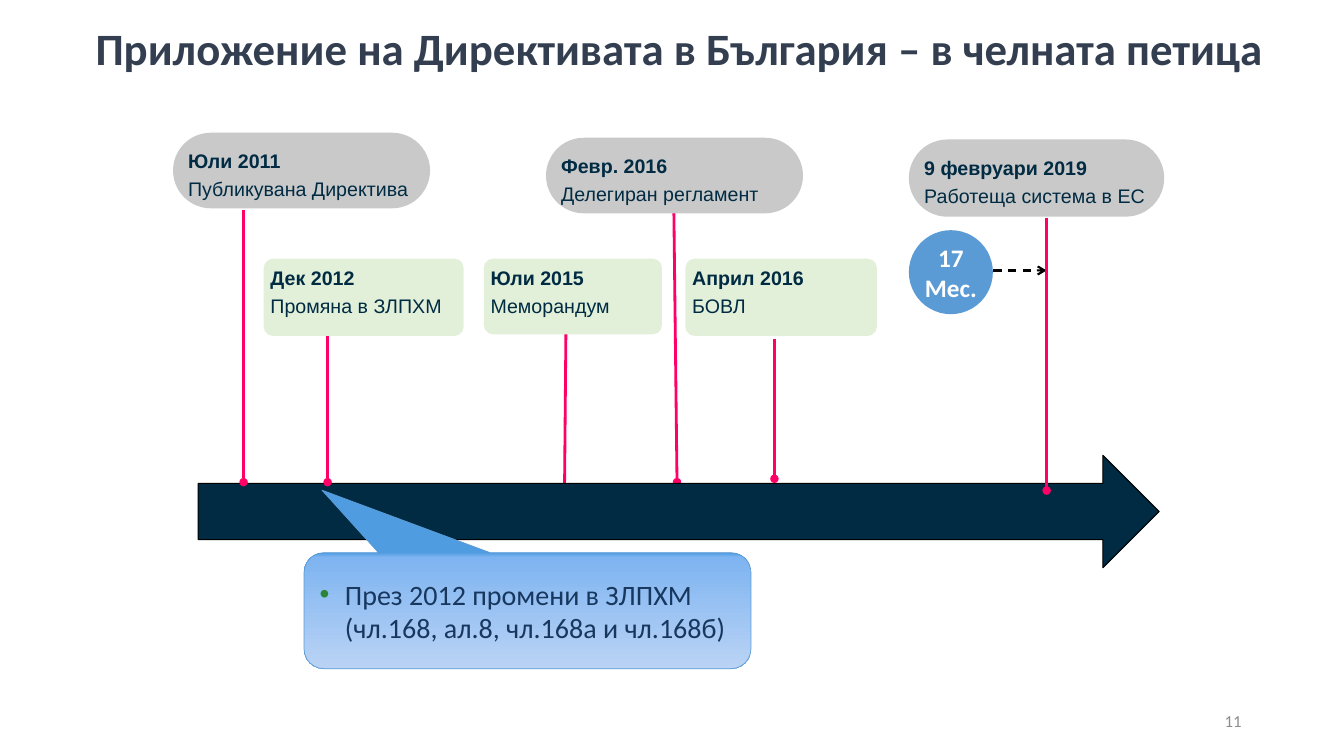
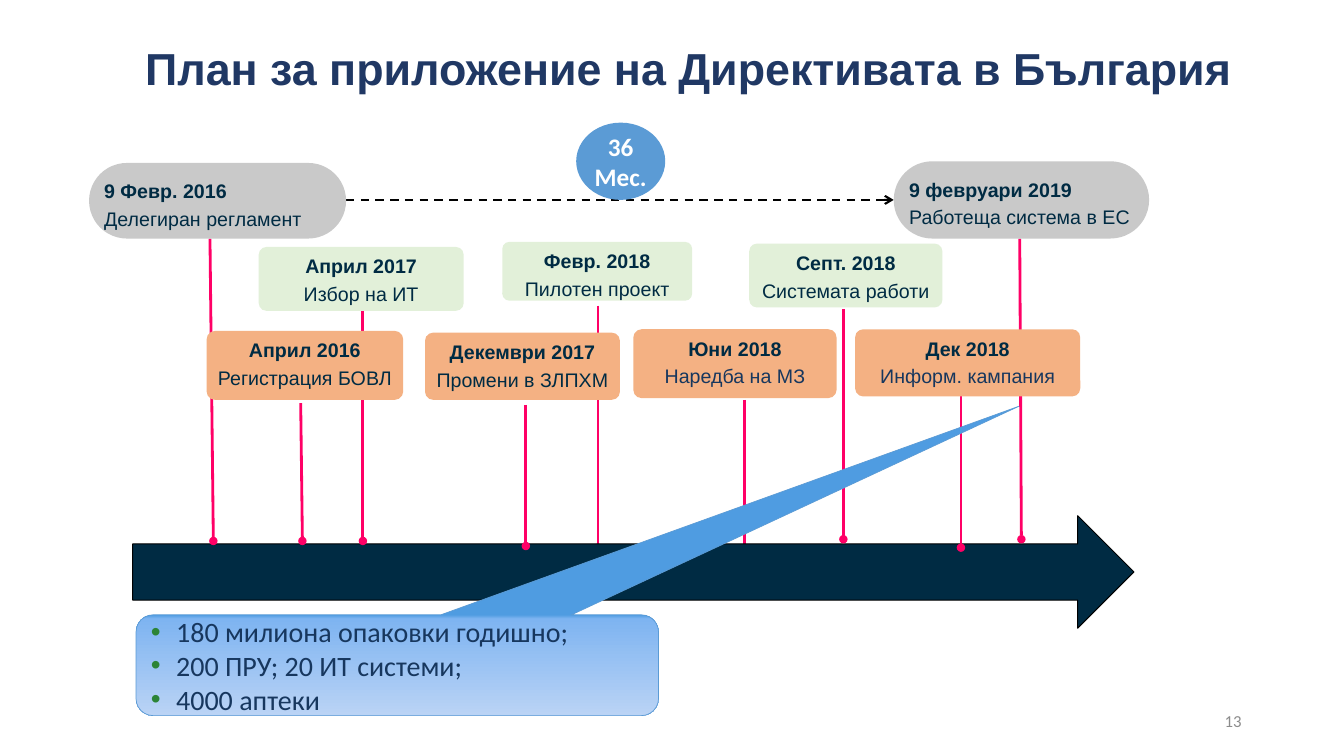
from lxml import etree
from pptx import Presentation
from pptx import util as u
from pptx.dml.color import RGBColor
from pptx.enum import dml, shapes, text
from pptx.oxml import ns

# Slide grid: 80 columns by 45 rows of square cells
COLS, ROWS = 80, 45
CELL = u.Inches(7.5) / ROWS

NAVY, INK, PINK, BLACK, WHITE = "002B43", "17375E", "FF0066", "000000", "FFFFFF"
GREY, GREEN, ORANGE, BLUE = "C9C9C9", "E2F0D9", "F4B183", "5B9BD5"
NUMBER_GREY, BULLET_GREEN = "8C8C8C", "2C8436"
CALLOUT_STOPS = [(0, "4F9CE1"), (4, "7EB4F1"), (100, "BAD3F5")]
LEFT, CENTER, RIGHT = text.PP_ALIGN.LEFT, text.PP_ALIGN.CENTER, text.PP_ALIGN.RIGHT
TOP, MIDDLE = text.MSO_ANCHOR.TOP, text.MSO_ANCHOR.MIDDLE
SHAPE = shapes.MSO_SHAPE


def cells(*values):
    return [u.Emu(round(v * CELL)) for v in values]


def rgb(color):
    return RGBColor.from_string(color)


def add_xml(parent, tag, **attrs):
    return etree.SubElement(parent, ns.qn(tag), **attrs)


def write(tf, lines, size, color, font="Calibri", bold=False, align=LEFT, anchor=MIDDLE):
    """Fill a text frame with one paragraph per line, all in one style."""
    tf.word_wrap = True
    tf.vertical_anchor = anchor
    tf.text = "\n".join(lines)
    for p in tf.paragraphs:
        p.alignment = align
        for r in p.runs:
            r.font.size, r.font.name, r.font.bold = u.Pt(size), font, bold
            r.font.color.rgb = rgb(color)


def set_insets(tf, x, y):
    tf.margin_left = tf.margin_right = u.Inches(x)
    tf.margin_top = tf.margin_bottom = u.Inches(y)


def add_shape(slide, kind, rect, fill=None, line=None, width=0.75, adj=()):
    sp = slide.shapes.add_shape(kind, *cells(*rect))
    sp.shadow.inherit = False
    if fill:
        sp.fill.solid()
        sp.fill.fore_color.rgb = rgb(fill)
    if line:
        sp.line.color.rgb = rgb(line)
        sp.line.width = u.Pt(width)
    else:
        sp.line.fill.background()
    for i, value in enumerate(adj):
        sp.adjustments[i] = value
    return sp


def add_line(slide, ends, color, width, tip, dashed=False):
    line = slide.shapes.add_connector(shapes.MSO_CONNECTOR.STRAIGHT, *cells(*ends))
    line.line.color.rgb = rgb(color)
    line.line.width = u.Pt(width)
    if dashed:
        line.line.dash_style = dml.MSO_LINE.DASH
    add_xml(line.line._get_or_add_ln(), "a:tailEnd", type=tip)
    add_xml(line._element.spPr, "a:effectLst")


def add_pins(slide, pins):
    for ends in pins:
        add_line(slide, ends, PINK, 2, "oval")


def add_textbox(slide, rect, line, size, color, **style):
    tf = slide.shapes.add_textbox(*cells(*rect)).text_frame
    write(tf, [line], size, color, **style)
    return tf


def add_title(slide, rect, title, color, font, align):
    tf = add_textbox(slide, rect, title, 32, color, font=font, bold=True,
                     align=align, anchor=TOP)
    tf.paragraphs[0].line_spacing = 0.9


def add_event(slide, rect, date, event, fill, align=LEFT, event_color=NAVY):
    """Rounded box with a bold date over an event; grey ones are pills."""
    sp = add_shape(slide, SHAPE.ROUNDED_RECTANGLE, rect, fill,
                   adj=[0.5 if fill == GREY else 0.12])
    tf = sp.text_frame
    write(tf, [date, event], 14, NAVY, font="Arial", align=align, anchor=TOP)
    set_insets(tf, 0.04, 0.05)
    for p in tf.paragraphs:
        p.space_after = u.Pt(3)
    tf.paragraphs[0].runs[0].font.bold = True
    tf.paragraphs[1].runs[0].font.color.rgb = rgb(event_color)


def add_duration(slide, rect, label):
    tf = add_shape(slide, SHAPE.OVAL, rect, BLUE).text_frame
    write(tf, [label], 18, WHITE, bold=True, align=CENTER)
    set_insets(tf, 0, 0)


def fill_gradient(sp, stops):
    """Top-to-bottom gradient through (percent, colour) stops."""
    sp.fill.gradient()
    grad = sp._element.spPr.find(ns.qn("a:gradFill"))
    for child in list(grad):
        grad.remove(child)
    gs_list = add_xml(grad, "a:gsLst")
    for percent, color in stops:
        gs = add_xml(gs_list, "a:gs", pos=str(percent * 1000))
        add_xml(gs, "a:srgbClr", val=color)
    add_xml(grad, "a:lin", ang="5400000", scaled="0")


def add_callout(slide, rect, pointer, lines):
    sp = add_shape(slide, SHAPE.ROUNDED_RECTANGULAR_CALLOUT, rect, line=BLUE,
                   width=0.5, adj=[*pointer, 0.17])
    fill_gradient(sp, CALLOUT_STOPS)
    write(sp.text_frame, lines, 20, INK)
    indent = u.Inches(0.25)
    for p in sp.text_frame.paragraphs:
        pPr = p._p.get_or_add_pPr()
        pPr.set("marL", str(indent))
        pPr.set("indent", str(-indent))
        add_xml(add_xml(pPr, "a:buClr"), "a:srgbClr", val=BULLET_GREEN)
        add_xml(pPr, "a:buFont", typeface="Arial")
        add_xml(pPr, "a:buChar", char="•")


def add_timeline(prs, title, number, axis, pins_behind, pins, span, duration,
                 events, callout):
    slide = prs.slides.add_slide(prs.slide_layouts[6])
    add_title(slide, *title)
    add_line(slide, span, BLACK, 1.5, "arrow", dashed=True)
    add_pins(slide, pins_behind)
    add_shape(slide, SHAPE.RIGHT_ARROW, axis, NAVY, BLACK, adj=[0.5, 0.5])
    add_pins(slide, pins)
    for event in events:
        add_event(slide, *event)
    add_duration(slide, *duration)
    add_callout(slide, *callout)
    add_textbox(slide, (56.5, 41.7, 18, 2.4), number, 12, NUMBER_GREY, align=RIGHT)


def main():
    prs = Presentation()
    prs.slide_width, prs.slide_height = cells(COLS, ROWS)
    add_timeline(
        prs,
        title=((5.1, 1.3, 71.3, 3.8),
               "Приложение на Директивата в България – в челната петица",
               "333F50", "Calibri", LEFT),
        number="11",
        axis=(11.8, 27.1, 57.2, 6.7),
        pins_behind=[(33.7, 18.2, 33.6, 29.4), (40.1, 11.5, 40.3, 28.7)],
        pins=[(14.5, 12.5, 14.5, 28.7), (19.5, 18.3, 19.5, 28.7),
              (46.1, 20.2, 46.1, 28.5), (62.3, 13, 62.3, 29.2)],
        span=(56.5, 16.1, 62.3, 16.1),
        duration=((54.1, 13.7, 5, 5), "17 Mес."),
        events=[
            ((10.3, 7.9, 15.3, 4.5), "Юли 2011", "Публикувана Директива", GREY),
            ((32.5, 8.2, 15.3, 4.5), "Февр. 2016", "Делегиран регламент", GREY),
            ((54.1, 8.3, 15.2, 4.6), "9 февруари 2019", "Работеща система в ЕС", GREY),
            ((15.7, 15.4, 11.9, 4.6), "Дек 2012", "Промяна в ЗЛПХМ", GREEN),
            ((28.8, 15.4, 10.6, 4.5), "Юли 2015", "Меморандум", GREEN),
            ((40.8, 15.4, 11.4, 4.6), "Април 2016", "БОВЛ", GREEN),
        ],
        callout=((18.1, 32.9, 26.6, 6.9), (-0.46, -1.04),
                 ["През 2012 промени в ЗЛПХМ (чл.168, ал.8, чл.168а и чл.168б)"]),
    )
    add_timeline(
        prs,
        title=((7.5, 2.5, 67, 4.9), "План за приложение на Директивата в България",
               "203864", "Arial", CENTER),
        number="13",
        axis=(7.9, 30.7, 59.6, 6.7),
        pins_behind=[(35.6, 18.2, 35.6, 32.6), (44.3, 23.8, 44.3, 33.1)],
        pins=[(12.5, 14.2, 12.7, 32.2), (17.9, 24, 18, 32.2),
              (21.6, 17.5, 21.6, 32.2), (31.3, 24.1, 31.3, 32.5),
              (50.2, 18.4, 50.2, 32.1), (57.2, 23.5, 57.2, 32.6),
              (60.7, 14.2, 60.8, 32.1)],
        span=(20.6, 11.9, 53.2, 11.9),
        duration=((34.3, 7.3, 5.3, 4.6), "36 Mес."),
        events=[
            ((5.3, 9.7, 15.3, 4.5), "9 Февр. 2016", "Делегиран регламент", GREY),
            ((53.2, 9.6, 15.2, 4.6), "9 февруари 2019", "Работеща система в ЕС", GREY),
            ((15.4, 14.7, 12.2, 3.8), "Април 2017", "Избор на ИТ", GREEN, CENTER),
            ((29.9, 14.4, 11.3, 3.5), "Февр. 2018", "Пилотен проект", GREEN, CENTER),
            ((44.6, 14.5, 11.5, 3.8), "Септ. 2018", "Системата работи", GREEN, CENTER),
            ((12.3, 19.7, 11.7, 4.1), "Април 2016", "Регистрация БОВЛ", ORANGE, CENTER),
            ((25.3, 19.8, 11.6, 4), "Декември 2017", "Промени в ЗЛПХМ", ORANGE, CENTER),
            ((37.7, 19.6, 12.1, 4.1), "Юни 2018", "Наредба на МЗ", ORANGE, CENTER, INK),
            ((50.9, 19.6, 13.4, 4), "Дек 2018", "Информ. кампания", ORANGE, CENTER, INK),
        ],
        callout=((8.1, 36.6, 31.1, 6), (1.19, -2.57),
                 ["180 милиона опаковки годишно;", "200 ПРУ; 20 ИТ системи;",
                  "4000 аптеки"]),
    )
    prs.save("out.pptx")


if __name__ == "__main__":
    main()
